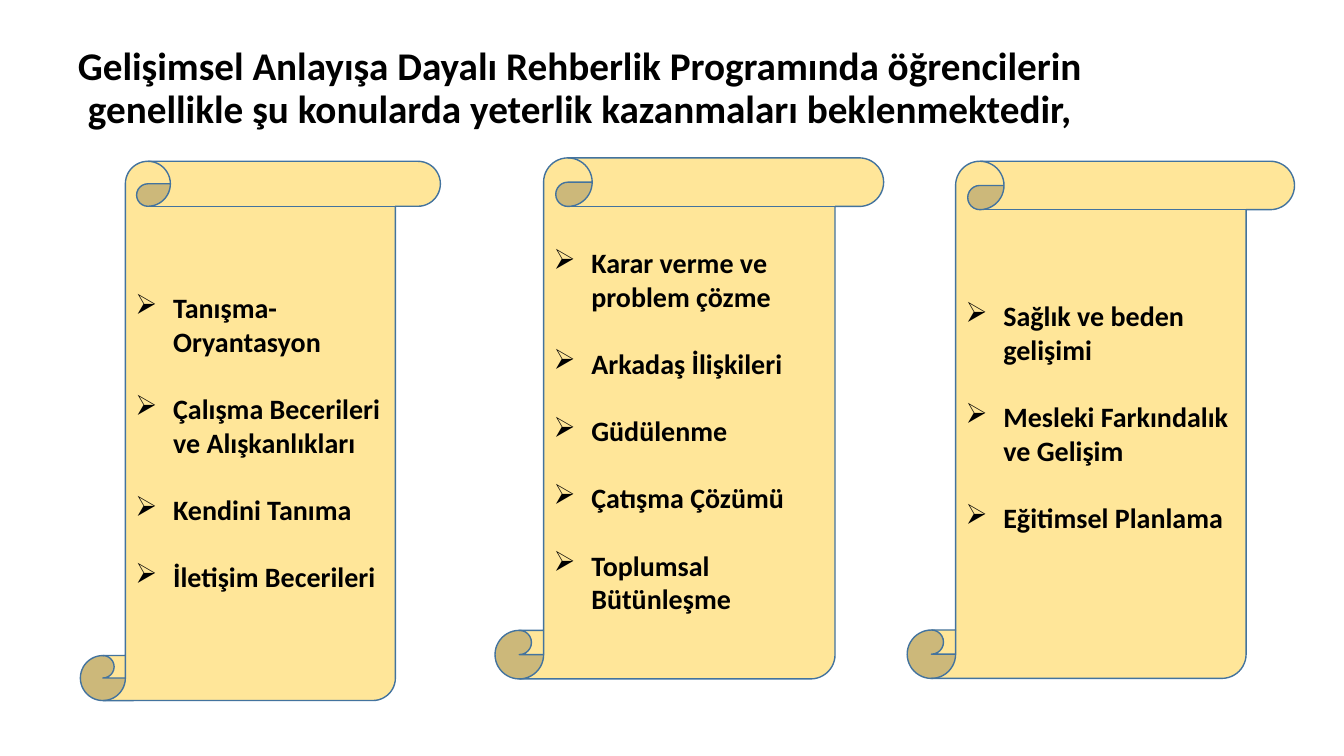
from pptx import Presentation, util as u
from pptx.dml.color import RGBColor
from pptx.enum import shapes, text
from lxml import etree

NS = "{http://schemas.openxmlformats.org/drawingml/2006/main}"
FONT = {"name": "Calibri", "bold": True}
INDENT = 27
TITLE = ("Gelişimsel Anlayışa Dayalı Rehberlik Programında öğrencilerin "
         "genellikle şu konularda yeterlik kazanmaları beklenmektedir,")
# Each scroll: box (left, top, width, height), bottom inset, topics
SCROLLS = [
    ((57.4, 115.2, 257.2, 385.2), 3.6,
     ["Tanışma- Oryantasyon", "Çalışma Becerileri ve Alışkanlıkları",
      "Kendini Tanıma", "İletişim Becerileri"]),
    ((353.6, 112.8, 277.6, 372.2), 3.6,
     ["Karar verme ve problem çözme", "Arkadaş İlişkileri", "Güdülenme",
      "Çatışma Çözümü", "Toplumsal Bütünleşme"]),
    ((648, 115.2, 276.7, 369.4), 25.6,
     ["Sağlık ve beden gelişimi", "Mesleki Farkındalık ve Gelişim",
      "Eğitimsel Planlama"]),
]


def color(code):
    return RGBColor.from_string(code)


def apply(item, values):
    for key, value in values.items():
        setattr(item, key, value)


def style(para, size):
    apply(para.font, {**FONT, "size": u.Pt(size)})
    para.font.color.rgb = color("000000")


def bullet(para):
    props = para._p.get_or_add_pPr()
    props.set("marL", str(u.Pt(INDENT)))
    props.set("indent", str(u.Pt(-INDENT)))
    etree.SubElement(props, NS + "buChar", char="➢")


def heading(slide, box):
    title = slide.shapes.title
    apply(title, dict(zip(("left", "top", "width", "height"), map(u.Pt, box))))
    frame = title.text_frame
    apply(frame, {"text": TITLE, "word_wrap": True,
                  "auto_size": text.MSO_AUTO_SIZE.NONE,
                  "vertical_anchor": text.MSO_ANCHOR.MIDDLE})
    para = frame.paragraphs[0]
    apply(para, {"alignment": text.PP_ALIGN.CENTER, "line_spacing": 0.9})
    style(para, 28)


def scroll(slide, box, inset, topics):
    shape = slide.shapes.add_shape(
        shapes.MSO_SHAPE.VERTICAL_SCROLL, *map(u.Pt, box))
    shape.shadow.inherit = False
    shape.fill.solid()
    shape.fill.fore_color.rgb = color("FFE699")
    shape.line.color.rgb = color("43739E")
    shape.line.width = u.Pt(1)
    frame = shape.text_frame
    apply(frame, {"word_wrap": True, "margin_bottom": u.Pt(inset),
                  "vertical_anchor": text.MSO_ANCHOR.MIDDLE})
    # Bulleted topics, one line apart
    for i, topic in enumerate(topics):
        para = frame.add_paragraph() if i else frame.paragraphs[0]
        para.text = topic
        bullet(para)
        para.alignment = text.PP_ALIGN.LEFT
        if i:
            para.space_before = u.Pt(24)
        style(para, 20)


def main():
    deck = Presentation()
    apply(deck, {"slide_width": u.Pt(960), "slide_height": u.Pt(540)})
    slide = deck.slides.add_slide(deck.slide_layouts[5])
    heading(slide, (0, 28.8, 828, 70))
    for box, inset, topics in SCROLLS:
        scroll(slide, box, inset, topics)
    deck.save("out.pptx")


if __name__ == "__main__":
    main()
